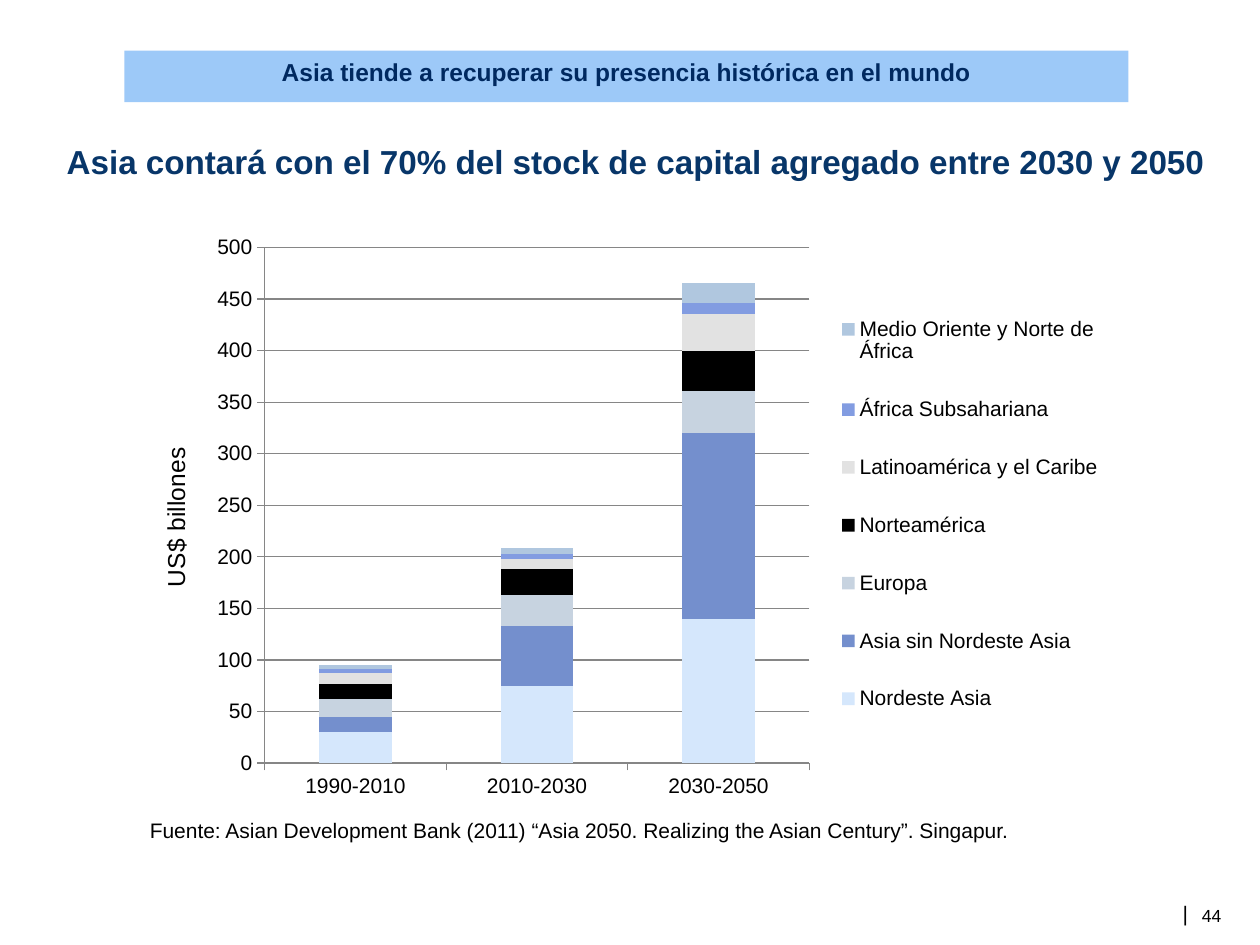
from lxml.etree import SubElement
from pptx import Presentation
from pptx.chart.data import CategoryChartData as ChartData
from pptx.dml.color import RGBColor as RGB
from pptx.enum.chart import XL_CHART_TYPE as Kind, XL_LEGEND_POSITION as Side, XL_TICK_MARK as Tick
from pptx.enum.shapes import MSO_SHAPE as Shape
from pptx.enum.text import MSO_ANCHOR as Anchor, MSO_AUTO_SIZE as Fit, PP_ALIGN as Align
from pptx.oxml.ns import qn
from pptx.util import Cm, Pt

FONT = "Arial"
BLACK = RGB(0, 0, 0)
NAVY = RGB(0x00, 0x29, 0x60)
BLUE = RGB(0x08, 0x36, 0x69)
SKY = RGB(0x9D, 0xC9, 0xF8)
GREY = RGB(0x86, 0x86, 0x86)

# Content
BANNER = "Asia tiende a recuperar su presencia histórica en el mundo"
TITLE = "Asia contará con el 70% del stock de capital agregado entre 2030 y 2050"
SOURCE = "Fuente: Asian Development Bank (2011) “Asia 2050. Realizing the Asian Century”. Singapur."
PAGE = "44"
UNIT = "US$ billones"
YEARS = ["1990-2010", "2010-2030", "2030-2050"]
REGIONS = [
    ("Nordeste Asia", (30, 75, 140), RGB(0xD5, 0xE7, 0xFC)),
    ("Asia sin Nordeste Asia", (15, 58, 180), RGB(0x74, 0x8F, 0xCD)),
    ("Europa", (17, 30, 41), RGB(0xC7, 0xD3, 0xE0)),
    ("Norteamérica", (15, 25, 39), BLACK),
    ("Latinoamérica y el Caribe", (10, 10, 36), RGB(0xE2, 0xE2, 0xE2)),
    ("África Subsahariana", (4, 5, 10), RGB(0x82, 0x9C, 0xE1)),
    ("Medio Oriente y Norte de África", (4, 5, 20), RGB(0xB0, 0xC7, 0xDF)),
]


def style(font, size, color=BLACK, bold=False):
    font.name, font.size, font.bold = FONT, Pt(size), bold
    font.color.rgb = color


def write(shape, text, size, color=BLACK, bold=False, align=Align.LEFT,
          anchor=Anchor.TOP, tight=False):
    frame = shape.text_frame
    frame.text = text
    frame.auto_size = Fit.NONE
    frame.word_wrap = not tight
    frame.vertical_anchor = anchor
    if tight:
        frame.margin_left = frame.margin_right = 0
        frame.margin_top = frame.margin_bottom = 0
    para = frame.paragraphs[0]
    para.alignment = align
    style(para.runs[0].font, size, color, bold)


def place(parent, before, x, y, w, h, inner=False):
    """Set a manual layout, in fractions of the chart."""
    for old in parent.findall(qn("c:layout")):
        parent.remove(old)
    layout = SubElement(parent, qn("c:layout"))
    man = SubElement(layout, qn("c:manualLayout"))
    parts = [("layoutTarget", "inner")] if inner else []
    parts += [("xMode", "edge"), ("yMode", "edge"),
              ("x", x), ("y", y), ("w", w), ("h", h)]
    for tag, val in parts:
        SubElement(man, qn("c:" + tag)).set("val", str(val))
    parent.find(qn("c:" + before)).addprevious(layout)


deck = Presentation()
deck.slide_width, deck.slide_height = Cm(25.4), Cm(19.05)
slide = deck.slides.add_slide(deck.slide_layouts[5])
shapes = slide.shapes

# Banner
band = shapes.add_shape(Shape.RECTANGLE, Cm(2.51), Cm(1.02), Cm(20.24), Cm(1.04))
band.shadow.inherit = False
band.fill.solid()
band.fill.fore_color.rgb = SKY
band.line.fill.background()
write(band, BANNER, 14, NAVY, True, Align.CENTER)

# Title
head = shapes.title
head.left, head.top, head.width, head.height = Cm(1.09), Cm(2.72), Cm(23.7), Cm(1.07)
write(head, TITLE, 19, BLUE, True)

# Chart
data = ChartData()
data.categories = YEARS
for name, vals, color in REGIONS:
    data.add_series(name, vals)
chart = shapes.add_chart(Kind.COLUMN_STACKED, Cm(2.69), Cm(4.52),
                         Cm(19.61), Cm(11.81), data).chart
style(chart.font, 12)
chart.has_title = False
plot = chart.plots[0]
plot.gap_width, plot.overlap = 150, 100
plot.vary_by_categories = False
for bar, (name, vals, color) in zip(plot.series, REGIONS):
    bar.format.fill.solid()
    bar.format.fill.fore_color.rgb = color

# Axes
cat, val = chart.category_axis, chart.value_axis
val.minimum_scale, val.maximum_scale, val.major_unit = 0, 500, 50
val.has_major_gridlines = True
for line in (cat.format.line, val.format.line, val.major_gridlines.format.line):
    line.color.rgb = GREY
    line.width = Pt(0.75)
for axis in (cat, val):
    axis.major_tick_mark = Tick.OUTSIDE
    axis.minor_tick_mark = Tick.NONE
label = val.axis_title.text_frame
label.text = UNIT
style(label.paragraphs[0].runs[0].font, 14)

# Legend
chart.has_legend = True
key = chart.legend
key.position, key.include_in_layout = Side.RIGHT, False
style(key.font, 12)
area = plot.series[0].format.fill and chart.element.find(".//" + qn("c:plotArea"))
place(area, "barChart", 0.135, 0.04, 0.56, 0.88, True)
place(chart.element.find(".//" + qn("c:legend")), "overlay", 0.72, 0.1, 0.28, 0.79)

# Source and page number
write(shapes.add_textbox(Cm(2.77), Cm(16.36), Cm(18.64), Cm(0.79)), SOURCE, 12)
write(shapes.add_textbox(Cm(23.85), Cm(18.14), Cm(0.1), Cm(0.53)), "|", 12,
      align=Align.RIGHT, anchor=Anchor.MIDDLE, tight=True)
write(shapes.add_textbox(Cm(24.23), Cm(18.24), Cm(0.56), Cm(0.43)), PAGE, 10, tight=True)

deck.save("out.pptx")
